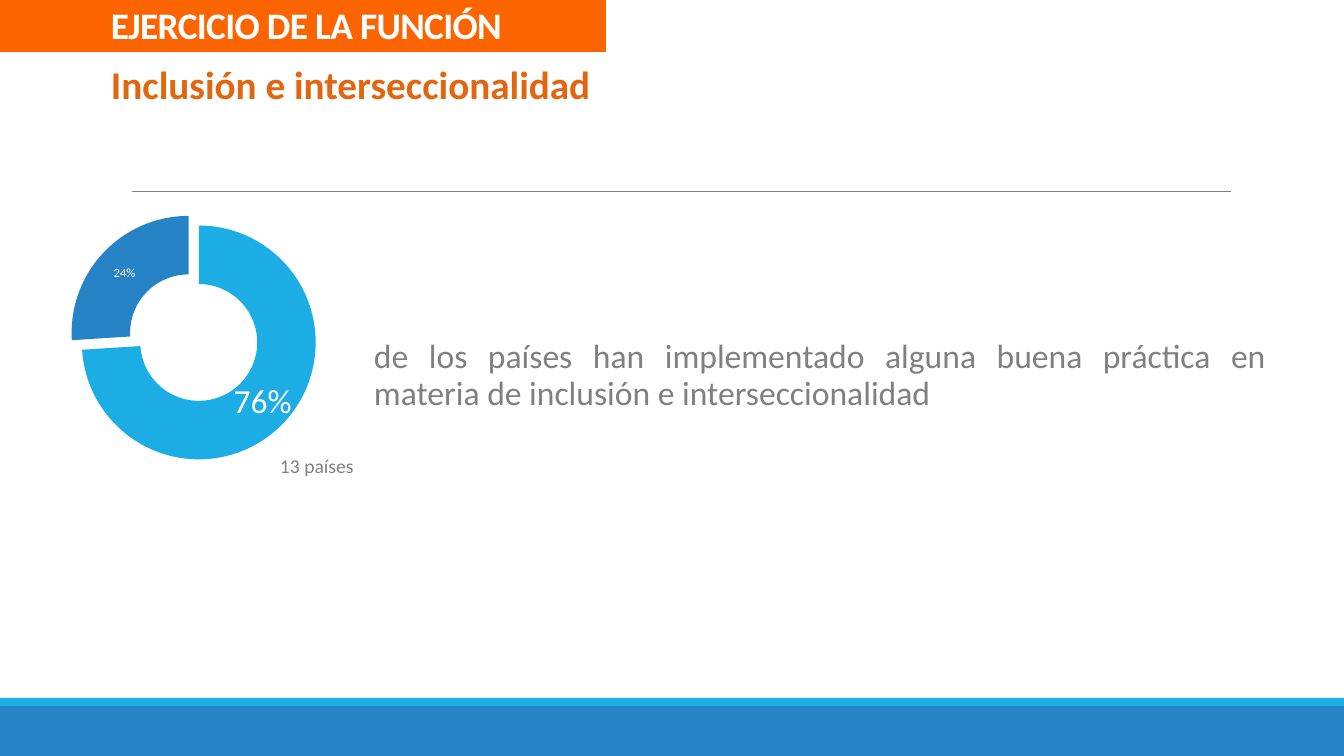
from dataclasses import dataclass

from lxml import etree
from pptx import Presentation
from pptx.chart.data import CategoryChartData
from pptx.dml.color import RGBColor
from pptx.enum.chart import XL_CHART_TYPE
from pptx.enum.shapes import MSO_CONNECTOR, MSO_SHAPE
from pptx.enum.text import MSO_ANCHOR, PP_ALIGN
from pptx.oxml.ns import qn
from pptx.util import Pt

RECT = MSO_SHAPE.RECTANGLE
LINE = MSO_CONNECTOR.STRAIGHT
DOUGHNUT = XL_CHART_TYPE.DOUGHNUT
TOP, BOTTOM = MSO_ANCHOR.TOP, MSO_ANCHOR.BOTTOM
LEFT, JUSTIFY = PP_ALIGN.LEFT, PP_ALIGN.JUSTIFY


@dataclass(frozen=True)
class Theme:
    font: str = "Calibri"
    white: str = "FFFFFF"
    black: str = "000000"
    gray: str = "808080"
    orange: str = "FC6400"
    title: str = "E26510"
    cyan: str = "1CADE4"
    blue: str = "2683C6"
    banner_size: float = 26.7
    title_size: int = 28
    body_size: int = 24
    note_size: int = 14
    small_size: int = 9
    chart_size: int = 10


T = Theme()
SLIDE = (1344, 756)
BARS = [
    ((0, 706, 1344, 50), T.blue),
    ((0, 698, 1344, 8), T.cyan),
]
RULE = (132, 191, 1231, 191)
BANNER = ("EJERCICIO DE LA FUNCIÓN", (0, 0, 606, 52))
TITLE = ("Inclusión e interseccionalidad", (101, 55, 505, 57))
BODY = (
    "de los países han implementado alguna buena práctica en materia "
    "de inclusión e interseccionalidad",
    (374, 335, 892, 165),
)
NOTE = ("13 países", (270, 449, 95, 34))
CHART_BOX = (-65, 180, 539, 332)
PLOT = {"x": 0.25, "y": 0.09, "w": 0.46, "h": 0.77}
EXPLOSION = 12
SLICES = [
    ("1", 74, "76%", T.cyan, T.body_size),
    ("2", 26, "24%", T.blue, T.small_size),
]


def px(n):
    return round(n * 914400 / 100.8)


def rgb(color):
    return RGBColor.from_string(color)


def style(font, size, color, bold=False):
    font.name = T.font
    font.size = Pt(size)
    font.bold = bold
    font.color.rgb = rgb(color)


def add_bar(s, box, color):
    sp = s.shapes.add_shape(RECT, *map(px, box))
    sp.shadow.inherit = False
    sp.fill.solid()
    sp.fill.fore_color.rgb = rgb(color)
    sp.line.fill.background()
    return sp


def write(sp, text, size, color, bold=False, wrap=False, anchor=TOP,
          align=LEFT, insets=(10, 5, 10, 5), spacing=None):
    tf = sp.text_frame
    tf.word_wrap = wrap
    tf.vertical_anchor = anchor
    (tf.margin_left, tf.margin_top,
     tf.margin_right, tf.margin_bottom) = map(px, insets)
    p = tf.paragraphs[0]
    p.alignment = align
    if spacing:
        p.line_spacing = spacing
    r = p.add_run()
    r.text = text
    style(r.font, size, color, bold)
    return r


def add_text(s, item, size, color, **options):
    text, box = item
    write(s.shapes.add_textbox(*map(px, box)), text, size, color, **options)


def add_rule(s):
    cx = s.shapes.add_connector(LINE, *map(px, RULE))
    cx.line.color.rgb = rgb(T.gray)
    cx.line.width = Pt(0.5)
    etree.SubElement(cx._element.spPr, qn("a:effectLst"))


def set_plot_layout(chart):
    area = chart._chartSpace.find(".//" + qn("c:plotArea"))
    layout = area.find(qn("c:layout"))
    if layout is None:
        layout = etree.Element(qn("c:layout"))
        area.insert(0, layout)
    manual = etree.SubElement(layout, qn("c:manualLayout"))
    settings = {"layoutTarget": "inner", "xMode": "edge", "yMode": "edge", **PLOT}
    for tag, value in settings.items():
        etree.SubElement(manual, qn("c:" + tag)).set("val", str(value))


def add_doughnut(s):
    data = CategoryChartData()
    data.categories = [name for name, *_ in SLICES]
    data.add_series("Series 1", [value for _, value, *_ in SLICES])
    chart = s.shapes.add_chart(DOUGHNUT, *map(px, CHART_BOX), data).chart
    chart.has_legend = False
    chart.has_title = False
    style(chart.font, T.chart_size, T.black)
    set_plot_layout(chart)
    plot = chart.plots[0]
    plot.vary_by_categories = True
    series = plot.series[0]
    labels = series.data_labels
    labels.show_percentage = True
    labels.show_value = False
    style(labels.font, T.small_size, T.white, True)
    for i, (_, _, label, color, size) in enumerate(SLICES):
        point = series.points[i]
        point.format.fill.solid()
        point.format.fill.fore_color.rgb = rgb(color)
        point.format.line.fill.background()
        r = point.data_label.text_frame.paragraphs[0].add_run()
        r.text = label
        style(r.font, size, T.white)
    explosion = etree.Element(qn("c:explosion"))
    explosion.set("val", str(EXPLOSION))
    series._element.find(qn("c:tx")).addnext(explosion)


def main():
    prs = Presentation()
    prs.slide_width, prs.slide_height = map(px, SLIDE)
    s = prs.slides.add_slide(prs.slide_layouts[6])
    for box, color in BARS:
        add_bar(s, box, color)
    add_rule(s)
    text, box = BANNER
    r = write(add_bar(s, box, T.orange), text, T.banner_size, T.white, bold=True,
              wrap=True, anchor=BOTTOM, insets=(111, 5, 10, 5), spacing=0.85)
    r.font._element.set("spc", "-50")
    add_text(s, TITLE, T.title_size, T.title, bold=True)
    add_text(s, BODY, T.body_size, T.gray, wrap=True, align=JUSTIFY,
             insets=(0, 5, 0, 5), spacing=0.9)
    add_doughnut(s)
    add_text(s, NOTE, T.note_size, T.gray)
    prs.save("out.pptx")


if __name__ == "__main__":
    main()
